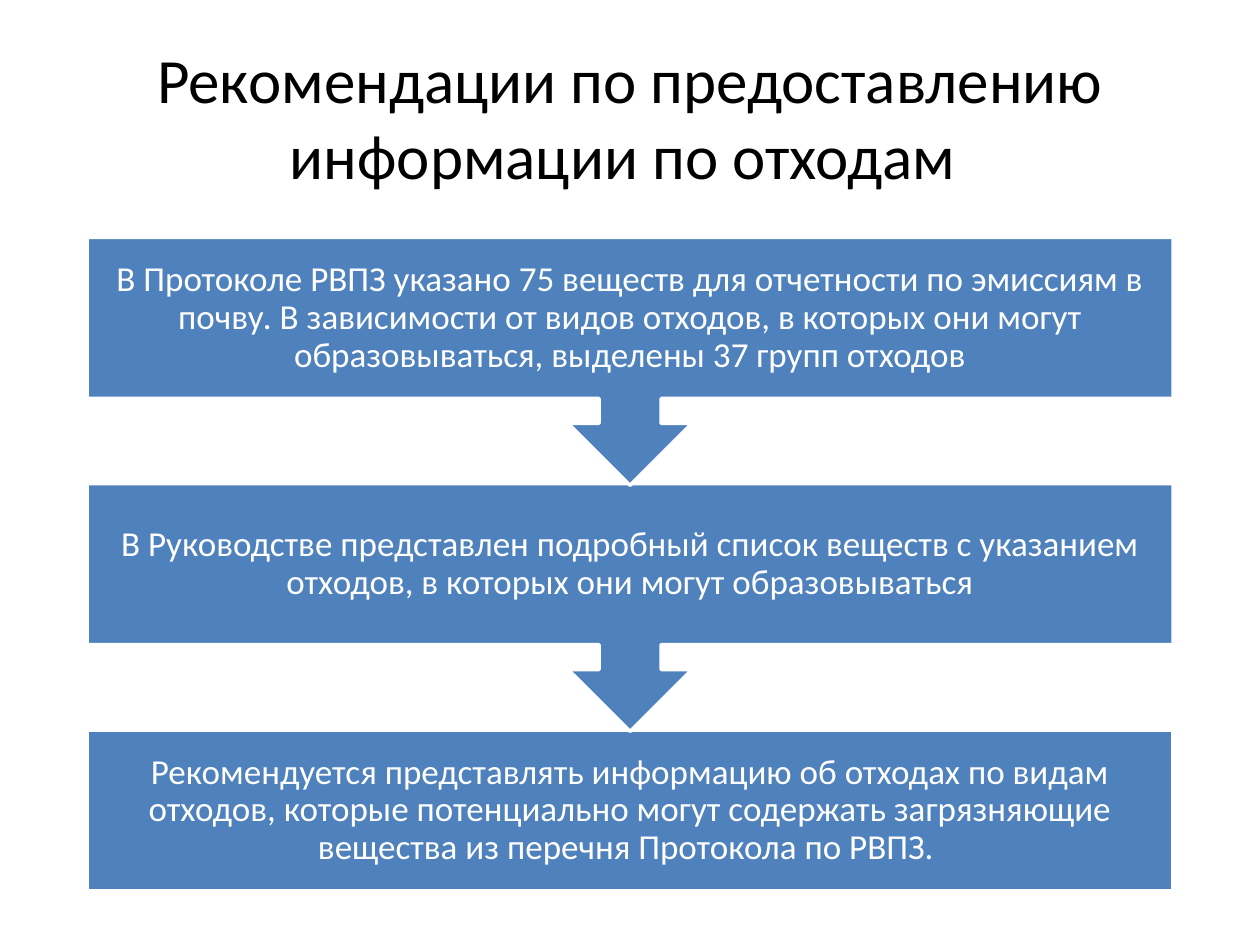
from dataclasses import dataclass
from pptx import Presentation
from pptx.dml.color import RGBColor
from pptx.enum.shapes import MSO_SHAPE
from pptx.enum.text import MSO_ANCHOR, PP_ALIGN
from pptx.util import Pt


@dataclass(frozen=True)
class Theme:
    """Colours, font and type sizes of the slide."""
    font: str = "Calibri"
    ink: str = "000000"
    pale: str = "FFFFFF"
    blue: str = "4F81BD"
    head: int = 36
    body: int = 20
    line: int = 2


THEME = Theme()
TITLE = "Рекомендации по предоставлению информации по отходам "
STEPS = [
    "В Протоколе РВПЗ указано 75 веществ для отчетности по эмиссиям в почву. "
    "В зависимости от видов отходов, в которых они могут образовываться, "
    "выделены 37 групп отходов",
    "В Руководстве представлен подробный список веществ с указанием отходов, "
    "в которых они могут образовываться",
    "Рекомендуется представлять информацию об отходах по видам отходов, "
    "которые потенциально могут содержать загрязняющие вещества из перечня "
    "Протокола по РВПЗ. ",
]


def apply(item, form):
    """Set each attribute named in a dict of format values."""
    for name, value in form.items():
        setattr(item, name, value)


def add_text(slide, box, text, size, tint, pad, lead):
    """Place centred text in a box with the given side and top insets."""
    frame = slide.shapes.add_textbox(*map(Pt, box)).text_frame
    side, top = map(Pt, pad)
    apply(frame, {
        "word_wrap": True, "vertical_anchor": MSO_ANCHOR.MIDDLE,
        "margin_left": side, "margin_right": side,
        "margin_top": top, "margin_bottom": top,
    })
    para = frame.paragraphs[0]
    apply(para, {"alignment": PP_ALIGN.CENTER, "line_spacing": lead})
    run = para.add_run()
    run.text = text
    apply(run.font, {"name": THEME.font, "size": Pt(size)})
    run.font.color.rgb = RGBColor.from_string(tint)


def add_block(slide, kind, box, turn):
    """Place one filled shape with a pale outline."""
    shape = slide.shapes.add_shape(kind, *map(Pt, box))
    shape.rotation = turn
    shape.shadow.inherit = False
    shape.fill.solid()
    shape.fill.fore_color.rgb = RGBColor.from_string(THEME.blue)
    shape.line.color.rgb = RGBColor.from_string(THEME.pale)
    shape.line.width = Pt(THEME.line)


def add_title(slide, box):
    """Place the heading in its box."""
    add_text(slide, box, TITLE, THEME.head, THEME.ink, (7.2, 3.6), 1)


def add_flow(slide, box, steps):
    """Stack the steps from the last up, so each arrow lies over the next."""
    left, top, width, height = box
    tall = 92.2
    pitch = (height - tall) / (len(steps) - 1)
    last = len(steps) - 1
    for rank in range(last, -1, -1):
        high = top + rank * pitch
        if rank == last:
            add_block(slide, MSO_SHAPE.RECTANGLE, (left, high, width, tall), 0)
        else:
            add_block(slide, MSO_SHAPE.UP_ARROW_CALLOUT,
                      (left, high, width, pitch + 1), 180)
        add_text(slide, (left, high, width, tall), steps[rank],
                 THEME.body, THEME.pale, (11.2, 11.2), 0.9)


def main():
    """Build the slide and save it."""
    deck = Presentation()
    apply(deck, {"slide_width": Pt(720), "slide_height": Pt(540)})
    slide = deck.slides.add_slide(deck.slide_layouts[6])
    add_title(slide, (36, 21.6, 648, 90))
    add_flow(slide, (49.7, 135.6, 620.6, 373.6), STEPS)
    deck.save("out.pptx")


if __name__ == "__main__":
    main()
